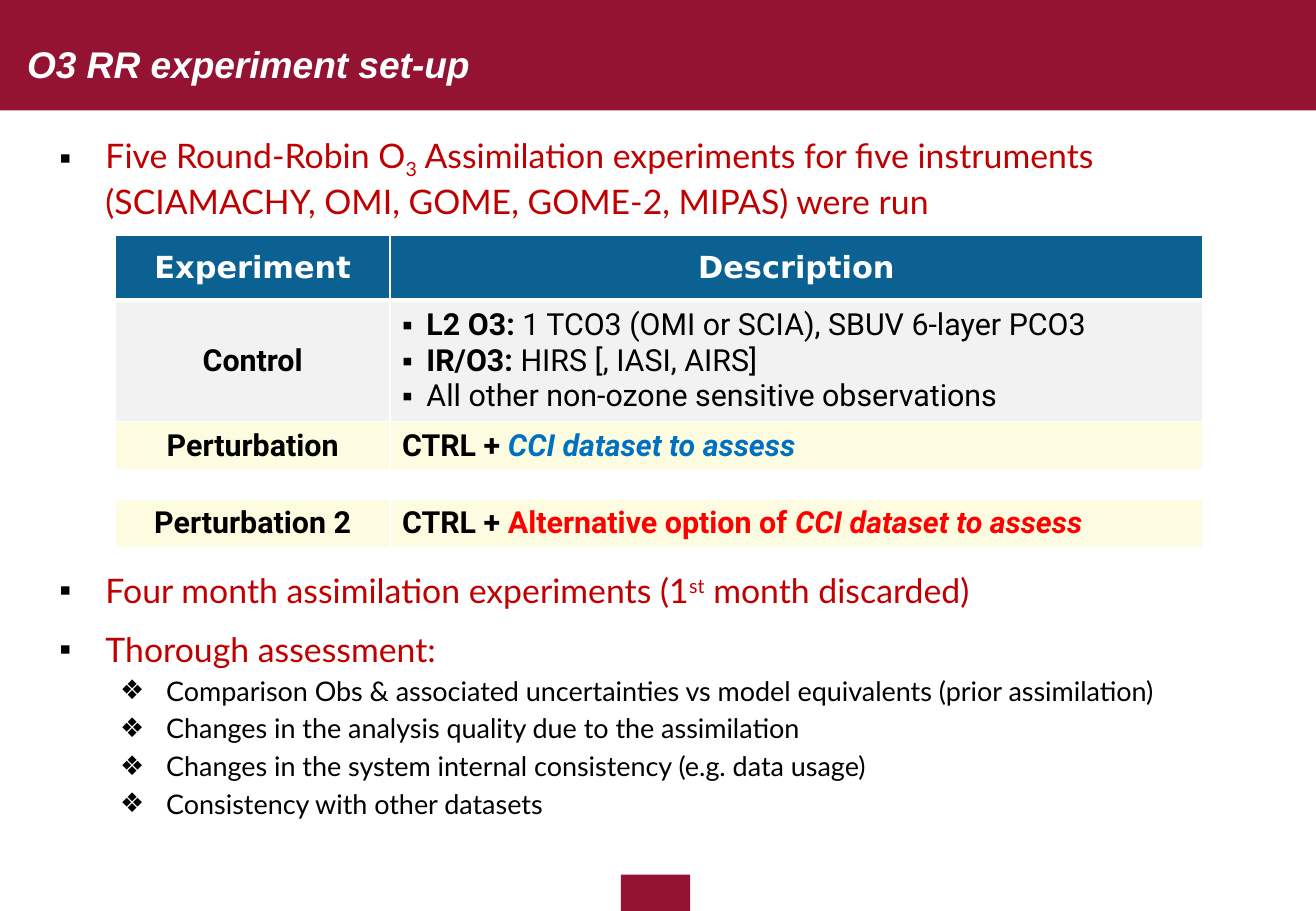
from lxml.etree import SubElement
from pptx import Presentation
from pptx.dml.color import RGBColor
from pptx.enum.shapes import MSO_SHAPE
from pptx.enum.text import MSO_ANCHOR, MSO_AUTO_SIZE, PP_ALIGN
from pptx.oxml import parse_xml
from pptx.oxml.ns import nsdecls, qn
from pptx.util import Inches, Pt

COLORS = {
    "burgundy": "941333", "white": "FFFFFF", "black": "000000", "crimson": "C00000",
    "header": "0B6192", "control": "F2F2F2", "perturbation": "FDFCE1",
    "blue": "0070C0", "red": "FF0000",
}


def add_run(paragraph, text, font="Lato", size=20, color="black", bold=False, italic=False, baseline=0):
    run = paragraph.add_run()
    run.text = text
    run.font.name = font
    run.font.size = Pt(size)
    run.font.bold = bold
    run.font.italic = italic
    run.font.color.rgb = RGBColor.from_string(COLORS[color])
    if baseline:
        run.font._element.set("baseline", str(baseline * 1000))


def add_bullet(paragraph, symbol, margin, hanging):
    properties = paragraph._p.get_or_add_pPr()
    properties.set("marL", str(Inches(margin)))
    properties.set("indent", str(-Inches(hanging)))
    color = SubElement(properties, qn("a:buClr"))
    SubElement(color, qn("a:srgbClr"), val=COLORS["black"])
    SubElement(properties, qn("a:buFont"), typeface="Arial")
    SubElement(properties, qn("a:buChar"), char=symbol)


def fill_paragraphs(frame, paragraphs, **style):
    for index, content in enumerate(paragraphs):
        paragraph = frame.paragraphs[0] if index == 0 else frame.add_paragraph()
        paragraph.alignment = content.get("align", PP_ALIGN.LEFT)
        if index:
            paragraph.space_before = Pt(content.get("before", 0))
        if "bullet" in content:
            add_bullet(paragraph, *content["bullet"])
        for text, changes in content["runs"]:
            add_run(paragraph, text, **{**style, **changes})


class SlideBuilder:
    def __init__(self, width, height):
        self.presentation = Presentation()
        self.presentation.slide_width = Inches(width)
        self.presentation.slide_height = Inches(height)
        self.slide = self.presentation.slides.add_slide(self.presentation.slide_layouts[5])

    def across(self, percent):
        return round(self.presentation.slide_width * percent / 100)

    def down(self, percent):
        return round(self.presentation.slide_height * percent / 100)

    def box(self, left, top, width, height):
        return self.across(left), self.down(top), self.across(width), self.down(height)

    def band(self, *place):
        shape = self.slide.shapes.add_shape(MSO_SHAPE.RECTANGLE, *self.box(*place))
        shape.shadow.inherit = False
        shape.fill.solid()
        shape.fill.fore_color.rgb = RGBColor.from_string(COLORS["burgundy"])
        shape.line.fill.background()

    def title(self, text, *place):
        title = self.slide.shapes.title
        title.left, title.top, title.width, title.height = self.box(*place)
        frame = title.text_frame
        frame.auto_size = MSO_AUTO_SIZE.NONE
        frame.word_wrap = True
        frame.vertical_anchor = MSO_ANCHOR.MIDDLE
        content = {"align": PP_ALIGN.CENTER, "runs": [(text, {})]}
        fill_paragraphs(frame, [content], font="Arial", size=22, color="white", bold=True, italic=True)
        title.element.getparent().append(title.element)

    def text(self, paragraphs, *place):
        frame = self.slide.shapes.add_textbox(*self.box(*place)).text_frame
        frame.word_wrap = True
        fill_paragraphs(frame, paragraphs, color="crimson")

    def table(self, rows, left, top, widths, heights):
        place = self.box(left, top, sum(widths), sum(heights))
        table = self.slide.shapes.add_table(len(rows), len(widths), *place).table
        for column, width in zip(table.columns, widths):
            column.width = self.across(width)
        for row_index, (row, height) in enumerate(zip(rows, heights)):
            table.rows[row_index].height = self.down(height)
            fill, contents = row
            for column_index in range(len(widths)):
                cell = table.cell(row_index, column_index)
                self.style_cell(cell, fill, row_index)
                if contents:
                    style = HEADER_STYLE if row_index == 0 else BODY_STYLE
                    fill_paragraphs(cell.text_frame, contents[column_index], **style)
                else:
                    SubElement(cell.text_frame.paragraphs[0]._p, qn("a:endParaRPr"), sz="800")
            if not contents:
                table.cell(row_index, 0).merge(table.cell(row_index, len(widths) - 1))

    def style_cell(self, cell, fill, row_index):
        cell.vertical_anchor = MSO_ANCHOR.MIDDLE
        cell.fill.solid()
        cell.fill.fore_color.rgb = RGBColor.from_string(COLORS[fill])
        thick_side = {0: "B", 1: "T"}.get(row_index)
        for position, side in enumerate("LRTB"):
            width = Pt(3 if side == thick_side else 1)
            border = parse_xml(
                f'<a:ln{side} {nsdecls("a")} w="{width}"><a:solidFill>'
                f'<a:srgbClr val="{COLORS["white"]}"/></a:solidFill></a:ln{side}>'
            )
            cell._tc.get_or_add_tcPr().insert(position, border)


HEADER_STYLE = {"font": "DejaVu Sans", "size": 18, "color": "white", "bold": True}
BODY_STYLE = {"font": "Roboto", "size": 18, "bold": True}
PLAIN = {"bold": False}


def centered(text):
    return [{"align": PP_ALIGN.CENTER, "runs": [(text, {})]}]


def main_point(*runs):
    return {"bullet": ("▪", 0.38, 0.38), "before": 10.8, "runs": runs}


def sub_point(text):
    return {"bullet": ("❖", 0.88, 0.38), "before": 3.2, "runs": [(text, {"size": 16, "color": "black"})]}


def cell_point(*runs):
    return {"bullet": ("▪", 0.2, 0.2), "runs": runs}


def main():
    builder = SlideBuilder(10.83, 7.5)
    builder.band(0, 0, 100, 12.13)
    builder.band(47.18, 96, 5.26, 4)
    builder.title("O3 RR experiment set-up", 0.28, 4.4, 37.2, 5.2)

    builder.text([main_point(
        ("Five Round-Robin O", {}),
        ("3", {"baseline": -25}),
        (" Assimilation experiments for five instruments (SCIAMACHY, OMI, GOME, GOME-2, MIPAS) were run", {}),
    )], 3.6, 14.13, 94.55, 11)

    control = [
        cell_point(("L2 O3: ", {}), ("1 TCO3 (OMI or SCIA), SBUV 6-layer PCO3", PLAIN)),
        cell_point(("IR/O3: ", {}), ("HIRS [, IASI, AIRS]", PLAIN)),
        cell_point(("All other non-ozone sensitive observations", PLAIN)),
    ]
    assessed = "CCI dataset to assess"
    perturbation = [{"runs": [("CTRL + ", {}), (assessed, {"color": "blue", "italic": True})]}]
    alternative = [{"runs": [
        ("CTRL + ", {}),
        ("Alternative option of ", {"color": "red"}),
        (assessed, {"color": "red", "italic": True}),
    ]}]
    builder.table([
        ("header", [centered("Experiment"), centered("Description")]),
        ("control", [centered("Control"), control]),
        ("perturbation", [centered("Perturbation"), perturbation]),
        ("white", None),
        ("perturbation", [centered("Perturbation 2"), alternative]),
    ], 8.77, 25.87, [20.87, 61.77], [7.07, 13.2, 5.33, 3.2, 5.33])

    builder.text([
        main_point(
            ("Four month assimilation experiments (1", {}),
            ("st", {"baseline": 30}),
            (" month discarded)", {}),
        ),
        main_point(("Thorough assessment:", {})),
        *map(sub_point, [
            "Comparison Obs & associated uncertainties vs model equivalents (prior assimilation)",
            "Changes in the analysis quality due to the assimilation",
            "Changes in the system internal consistency (e.g. data usage)",
            "Consistency with other datasets",
        ]),
    ], 3.6, 61.87, 94.55, 32.5)
    builder.presentation.save("out.pptx")


if __name__ == "__main__":
    main()
